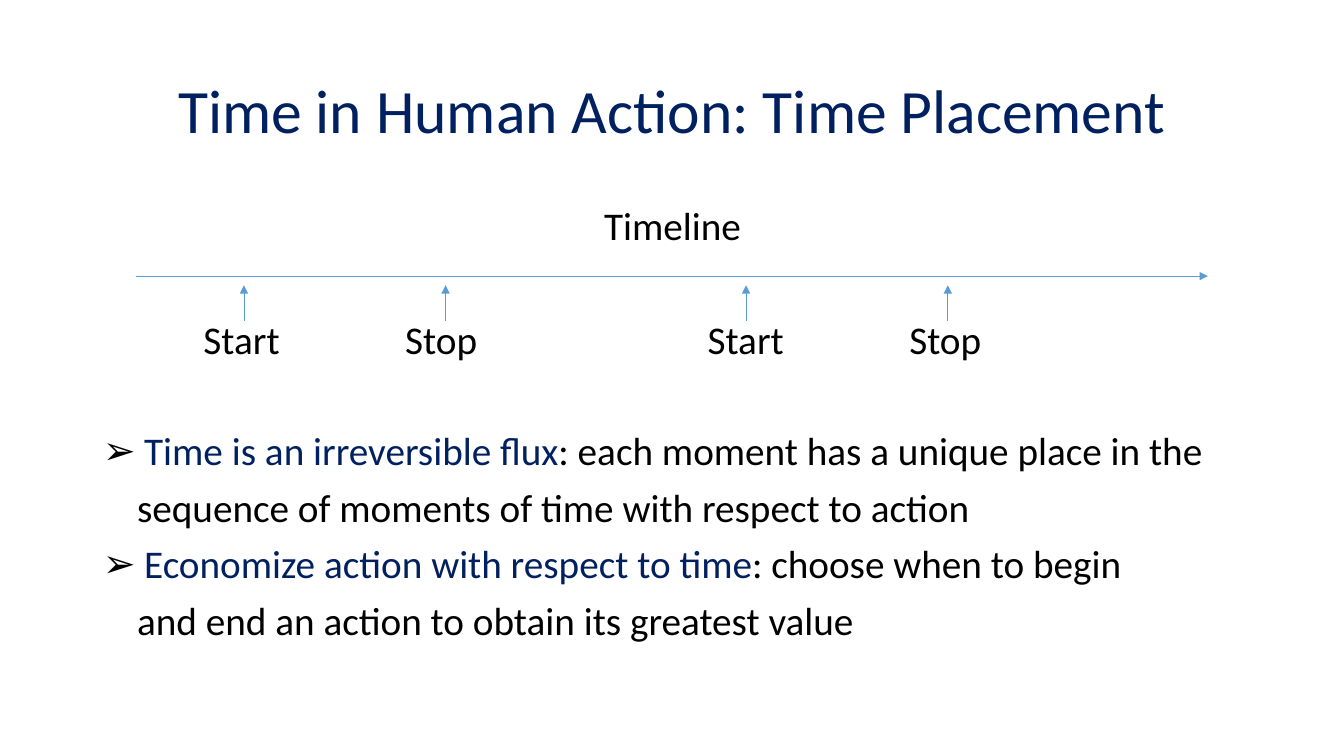
from pptx import Presentation
from pptx.dml.color import RGBColor
from pptx.enum.shapes import MSO_CONNECTOR
from pptx.enum.text import MSO_ANCHOR, MSO_AUTO_SIZE, PP_ALIGN
from pptx.oxml.ns import qn
from pptx.util import Inches, Pt
from lxml import etree

STRAIGHT = MSO_CONNECTOR.STRAIGHT
MIDDLE, TOP = MSO_ANCHOR.MIDDLE, MSO_ANCHOR.TOP
CENTER, LEFT = PP_ALIGN.CENTER, PP_ALIGN.LEFT
NO_FIT = MSO_AUTO_SIZE.NONE
NAVY, BLACK, BLUE = "002060", "000000", "5B9BD5"
FONT = "Calibri"

TITLE = "Time in Human Action: Time Placement"
TIMELINE = "Timeline"
# label, left edge of its box, arrow position
EVENTS = [
    ("Start", 1.92, 2.42),
    ("Stop", 3.92, 4.42),
    ("Start", 6.92, 7.4),
    ("Stop", 8.92, 9.4),
]
# highlighted start, rest of the first line, second line
POINTS = [
    ("Time is an irreversible flux",
     ": each moment has a unique place in the",
     "sequence of moments of time with respect to action"),
    ("Economize action with respect to time",
     ": choose when to begin",
     "and end an action to obtain its greatest value"),
]

LEFT_EDGE, WIDTH = 0.92, 11.5
AXIS_Y, ARROW_TIP, LABEL_TOP, LABEL_HEIGHT = 2.74, 2.83, 3.18, 0.45
GAP = 10            # points above each line
DIAGRAM_GAP = 130.8  # points left for the diagram below its heading
BULLET_INDENT, TEXT_INDENT = 0.41, 0.34


def color(value):
    return RGBColor.from_string(value)


def place(shape, left, top, width, height, anchor=TOP):
    shape.left, shape.top = Inches(left), Inches(top)
    shape.width, shape.height = Inches(width), Inches(height)
    frame = shape.text_frame
    frame.word_wrap, frame.auto_size = True, NO_FIT
    frame.vertical_anchor = anchor
    return frame


def add_span(para, text, size, tone):
    span = para.add_run()
    span.text = text
    span.font.name, span.font.size = FONT, Pt(size)
    span.font.color.rgb = color(tone)


def add_line(frame, spans, size=28, gap=GAP, align=LEFT, indent=0, bullet=None):
    """Add one paragraph made of (text, colour) spans."""
    para = frame.paragraphs[0]
    if para.runs:
        para = frame.add_paragraph()
    para.alignment = align
    para.line_spacing, para.space_before = 0.9, Pt(gap)
    for text, tone in spans:
        add_span(para, text, size, tone)
    props = para._p.get_or_add_pPr()
    props.set("marL", str(Inches(indent)))
    props.set("indent", str(-Inches(indent) if bullet else 0))
    if bullet:
        tone = etree.SubElement(props, qn("a:buClr"))
        etree.SubElement(tone, qn("a:srgbClr")).set("val", BLACK)
        etree.SubElement(props, qn("a:buChar")).set("char", bullet)
    else:
        etree.SubElement(props, qn("a:buNone"))


def add_arrow(page, x1, y1, x2, y2):
    arrow = page.shapes.add_connector(
        STRAIGHT, Inches(x1), Inches(y1), Inches(x2), Inches(y2))
    arrow.line.color.rgb = color(BLUE)
    arrow.line.width = Pt(0.5)
    line = arrow.line._get_or_add_ln()
    etree.SubElement(line, qn("a:tailEnd")).set("type", "triangle")
    etree.SubElement(arrow._element.spPr, qn("a:effectLst"))
    return arrow


def add_event(page, label, left, x):
    """Add a label whose box is centred on x, with its arrow to the axis."""
    box = page.shapes.add_textbox(0, 0, 0, 0)
    frame = place(box, left, LABEL_TOP, 2 * (x - left), LABEL_HEIGHT)
    frame.margin_top = frame.margin_right = frame.margin_bottom = 0
    add_line(frame, [(label, BLACK)], gap=0)
    arrow = add_arrow(page, x, LABEL_TOP, x, ARROW_TIP)
    arrow.begin_connect(box, 0)


def main():
    deck = Presentation()
    deck.slide_width, deck.slide_height = Inches(13.33), Inches(7.5)
    page = deck.slides.add_slide(deck.slide_layouts[1])

    heading = place(page.shapes.title, LEFT_EDGE, 0.4, WIDTH, 1.45, MIDDLE)
    add_line(heading, [(TITLE, NAVY)], size=44, gap=0, align=CENTER)

    body = place(page.placeholders[1], LEFT_EDGE, 2, WIDTH, 4.76)
    add_line(body, [(TIMELINE, BLACK)], align=CENTER)
    for number, (lead, rest, second) in enumerate(POINTS):
        add_line(body, [(lead, NAVY), (rest, BLACK)],
                 gap=GAP if number else DIAGRAM_GAP,
                 indent=BULLET_INDENT, bullet="➢")
        add_line(body, [(second, BLACK)], indent=TEXT_INDENT)

    add_arrow(page, 1.35, AXIS_Y, 11.98, AXIS_Y)
    for label, left, x in EVENTS:
        add_event(page, label, left, x)

    deck.save("out.pptx")


if __name__ == "__main__":
    main()
